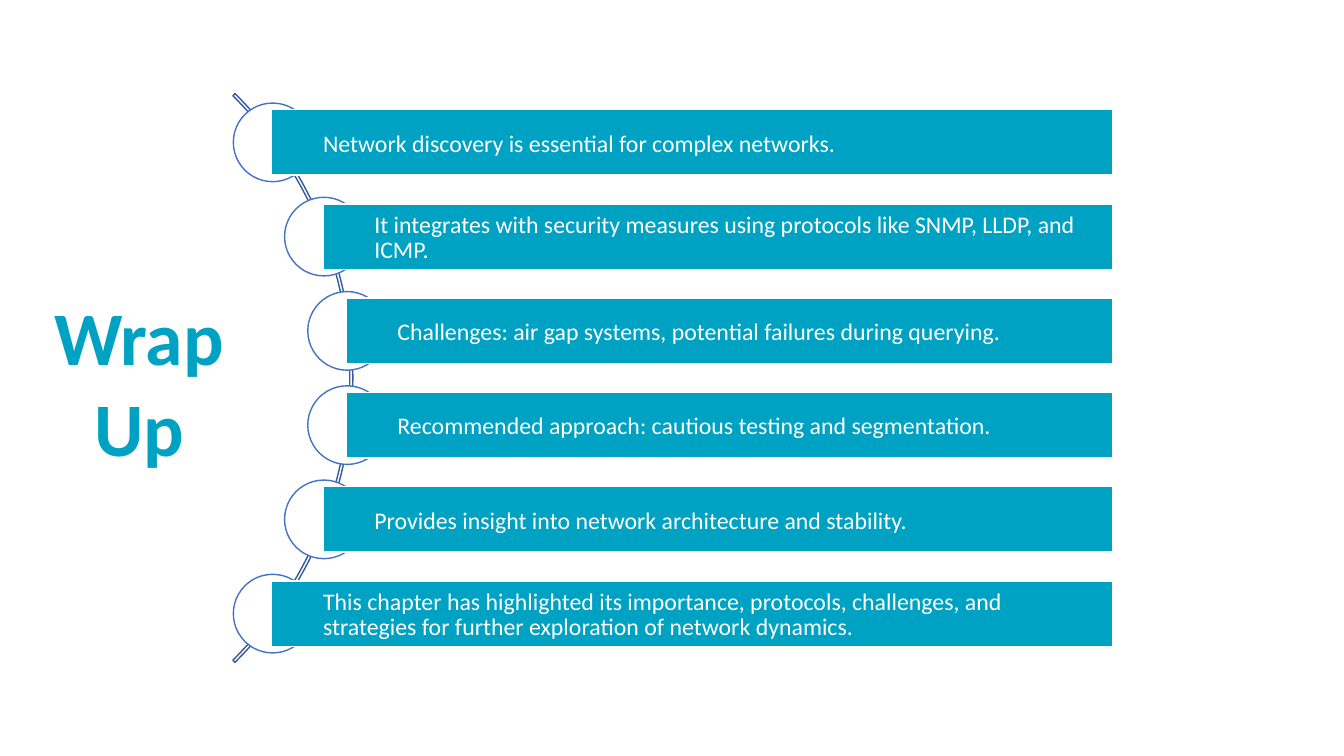
import math
from dataclasses import dataclass

import pptx
import pptx.dml.color
import pptx.enum.shapes
import pptx.enum.text
import pptx.util
from pptx.util import Inches

MESSAGES = [
    "Network discovery is essential for complex networks.",
    "It integrates with security measures using protocols like SNMP, LLDP, and ICMP.",
    "Challenges: air gap systems, potential failures during querying.",
    "Recommended approach: cautious testing and segmentation.",
    "Provides insight into network architecture and stability.",
    "This chapter has highlighted its importance, protocols, challenges, and "
    "strategies for further exploration of network dynamics.",
]

# All in inches: the arc is a quarter circle, and the bars start on it.
ARC_X, ARC_Y = -0.49, 3.75
ARC_INNER, ARC_OUTER = 3.96, 3.99
BAR_RADIUS = 3.95
BAR_RIGHT = 11.04
BAR_HEIGHT = 0.65
BAR_PITCH = 0.935
NODE_SIZE = 0.78


@dataclass(frozen=True)
class Theme:
    font: str = "Calibri"
    accent: str = "00A2C3"
    node_line: str = "4472C4"
    arc_line: str = "34599C"
    white: str = "FFFFFF"
    title_size: float = 54
    title_spacing: float = 65
    bar_size: float = 17
    bar_spacing: float = 17.8
    line_width: float = 1


class SlideBuilder:
    def __init__(self, slide, theme):
        self.slide = slide
        self.theme = theme

    def paint(self, shape, line, fill=None):
        shape.shadow.inherit = False
        if fill:
            shape.fill.solid()
            shape.fill.fore_color.rgb = pptx.dml.color.RGBColor.from_string(fill)
        else:
            shape.fill.background()
        shape.line.color.rgb = pptx.dml.color.RGBColor.from_string(line)
        shape.line.width = pptx.util.Pt(self.theme.line_width)

    def add_text(self, paragraph, text, size, color, spacing, alignment, bold=False):
        paragraph.alignment = alignment
        paragraph.line_spacing = pptx.util.Pt(spacing)
        paragraph.space_before = pptx.util.Pt(0)
        run = paragraph.add_run()
        run.text = text
        run.font.name = self.theme.font
        run.font.size = pptx.util.Pt(size)
        run.font.bold = bold
        run.font.color.rgb = pptx.dml.color.RGBColor.from_string(color)

    def frame(self, shape, anchor, left=0, top=0, right=0):
        """Set the insets and anchor of a shape's text and return its frame."""
        frame = shape.text_frame
        frame.word_wrap = True
        frame.auto_size = pptx.enum.text.MSO_AUTO_SIZE.NONE
        frame.vertical_anchor = anchor
        frame.margin_left, frame.margin_top = Inches(left), Inches(top)
        frame.margin_right, frame.margin_bottom = Inches(right), Inches(0)
        return frame

    def title(self, words, left, top, width, height):
        title = self.slide.shapes.title
        title.left, title.top = Inches(left), Inches(top)
        title.width, title.height = Inches(width), Inches(height)
        frame = self.frame(title, pptx.enum.text.MSO_ANCHOR.TOP)
        for index, word in enumerate(words):
            paragraph = frame.add_paragraph() if index else frame.paragraphs[0]
            self.add_text(paragraph, word, self.theme.title_size, self.theme.accent,
                          self.theme.title_spacing, pptx.enum.text.PP_ALIGN.CENTER,
                          bold=True)

    def arc(self):
        """Draw the thin band between the two radii, from -45 to 45 degrees."""
        def point(radius, degrees):
            angle = math.radians(degrees)
            return (Inches(ARC_X + radius * math.cos(angle)),
                    Inches(ARC_Y + radius * math.sin(angle)))

        outer = [point(ARC_OUTER, degrees) for degrees in range(-45, 46)]
        inner = [point(ARC_INNER, degrees) for degrees in range(45, -46, -1)]
        builder = self.slide.shapes.build_freeform(*outer[0])
        builder.add_line_segments(outer[1:] + inner, close=True)
        self.paint(builder.convert_to_shape(), self.theme.arc_line)

    def node(self, center_x, center_y):
        node = self.slide.shapes.add_shape(
            pptx.enum.shapes.MSO_SHAPE.OVAL,
            Inches(center_x - NODE_SIZE / 2), Inches(center_y - NODE_SIZE / 2),
            Inches(NODE_SIZE), Inches(NODE_SIZE))
        self.paint(node, self.theme.node_line, self.theme.white)

    def bar(self, text, left, center_y):
        bar = self.slide.shapes.add_shape(
            pptx.enum.shapes.MSO_SHAPE.RECTANGLE,
            Inches(left), Inches(center_y - BAR_HEIGHT / 2),
            Inches(BAR_RIGHT - left), Inches(BAR_HEIGHT))
        self.paint(bar, self.theme.white, self.theme.accent)
        frame = self.frame(bar, pptx.enum.text.MSO_ANCHOR.MIDDLE,
                           left=0.51, top=0.04, right=0.3)
        self.add_text(frame.paragraphs[0], text, self.theme.bar_size, self.theme.white,
                      self.theme.bar_spacing, pptx.enum.text.PP_ALIGN.LEFT)


def main():
    presentation = pptx.Presentation()
    presentation.slide_width = Inches(13.33)
    presentation.slide_height = Inches(7.5)
    slide = presentation.slides.add_slide(presentation.slide_layouts[5])
    builder = SlideBuilder(slide, Theme())

    builder.title(["Wrap", "Up"], 0.38, 2.87, 2, 1.81)
    builder.arc()
    offsets = [(index - (len(MESSAGES) - 1) / 2) * BAR_PITCH
               for index in range(len(MESSAGES))]
    starts = [(ARC_X + math.sqrt(BAR_RADIUS ** 2 - offset ** 2), ARC_Y + offset)
              for offset in offsets]
    for left, center_y in starts:
        builder.node(left + 0.01, center_y)
    for message, (left, center_y) in zip(MESSAGES, starts):
        builder.bar(message, left, center_y)

    presentation.save("out.pptx")


if __name__ == "__main__":
    main()
